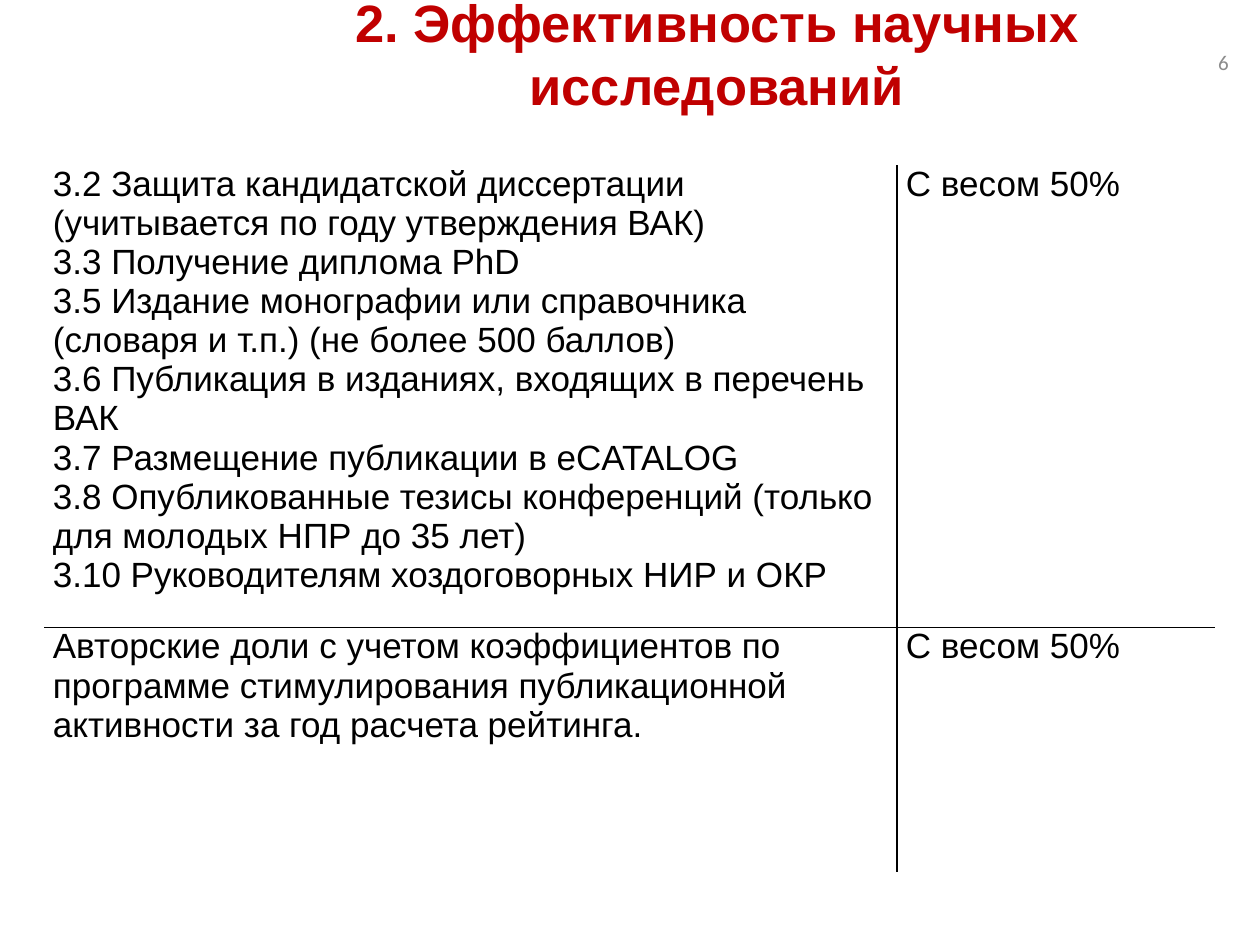
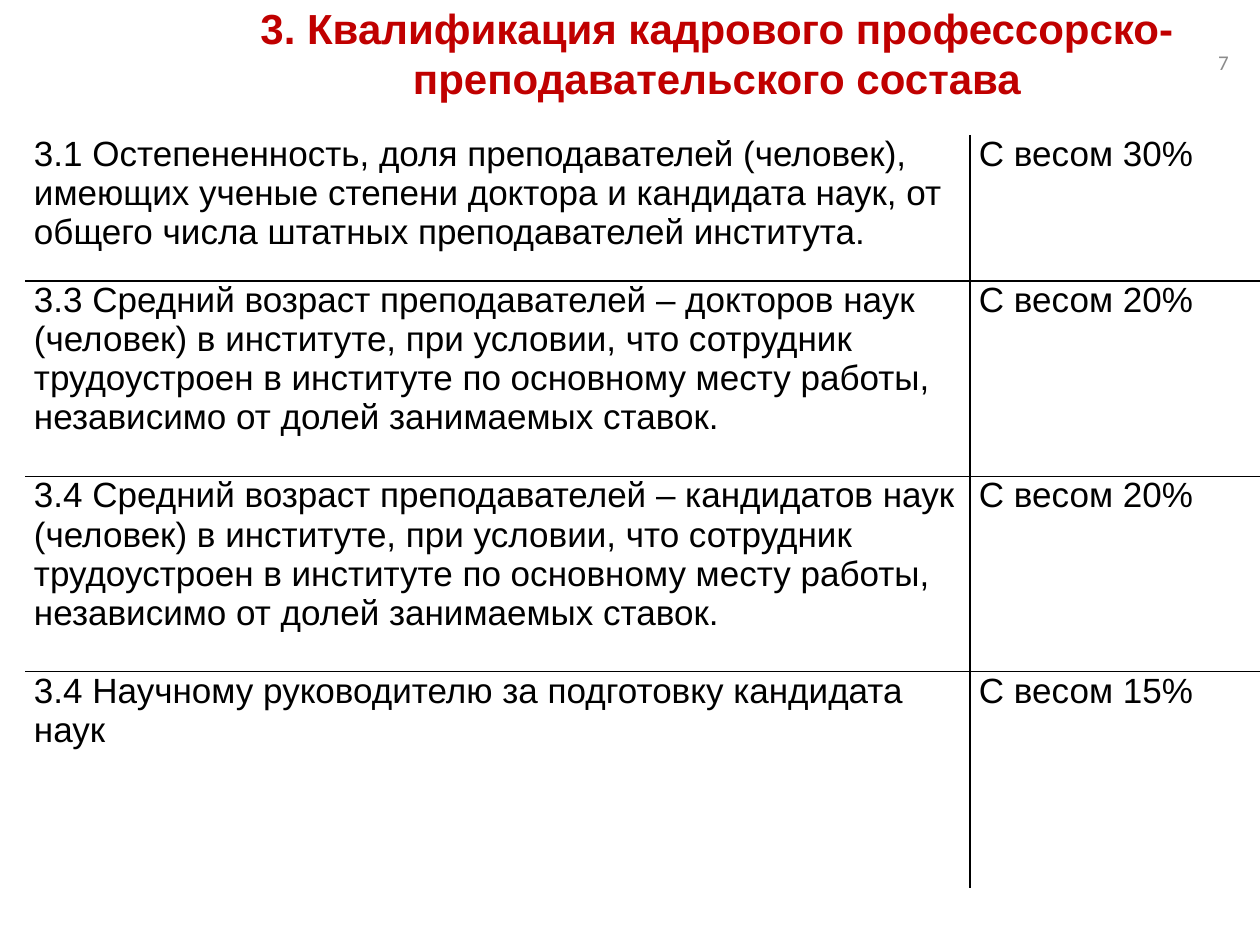
from dataclasses import dataclass

from lxml import etree
from pptx import Presentation
from pptx.dml.color import RGBColor
from pptx.enum.text import MSO_ANCHOR, PP_ALIGN
from pptx.oxml.ns import qn
from pptx.util import Inches, Pt

CENTER, LEFT, RIGHT = PP_ALIGN.CENTER, PP_ALIGN.LEFT, PP_ALIGN.RIGHT
TOP, MIDDLE = MSO_ANCHOR.TOP, MSO_ANCHOR.MIDDLE

TITLE_RED = "C00000"
NUMBER_GRAY = "8C8C8C"
BLACK = "000000"
TITLE_AREA = (1.38, 0, 8.62, 0.84)
NUMBER_AREA = (9.17, 0.29, 0.68, 0.4)
CELL_MARGIN = 0.07


@dataclass
class Criterion:
    lines: list[str]
    weight: str
    height: float


@dataclass
class RatingPage:
    number: int
    title: str
    title_size: int
    left: float
    top: float
    widths: tuple[float, float]
    criteria: list[Criterion]


AGE_TEXT = ("3.{} Средний возраст преподавателей – {} наук (человек) в институте, "
            "при условии, что сотрудник трудоустроен в институте по основному месту "
            "работы, независимо от долей занимаемых ставок.")

PAGES = [
    RatingPage(6, "2. Эффективность научных исследований", 30, 0.35, 1.31, (6.77, 2.52), [
        Criterion([
            "3.2 Защита кандидатской диссертации (учитывается по году утверждения ВАК)",
            "3.3 Получение диплома PhD",
            "3.5 Издание монографии или справочника (словаря и т.п.) (не более 500 баллов)",
            "3.6 Публикация в изданиях, входящих в перечень ВАК",
            "3.7 Размещение публикации в eCATALOG",
            "3.8 Опубликованные тезисы конференций (только для молодых НПР до 35 лет)",
            "3.10 Руководителям хоздоговорных НИР и ОКР",
        ], "С весом 50%", 3.1),
        Criterion(["Авторские доли с учетом коэффициентов по программе стимулирования "
                   "публикационной активности за год расчета рейтинга."],
                  "С весом 50%", 1.94),
    ]),
    RatingPage(7, "3. Квалификация кадрового профессорско-преподавательского состава",
               24, 0.2, 1.07, (7.5, 2.31), [
        Criterion(["3.1 Остепененность, доля преподавателей (человек), имеющих ученые "
                   "степени доктора и кандидата наук, от общего числа штатных "
                   "преподавателей института."], "С весом 30%", 1.16),
        Criterion([AGE_TEXT.format(3, "докторов")], "С весом 20%", 1.55),
        Criterion([AGE_TEXT.format(4, "кандидатов")], "С весом 20%", 1.55),
        Criterion(["3.4 Научному руководителю за подготовку кандидата наук"],
                  "С весом 15%", 1.72),
    ]),
]


def color(value: str) -> RGBColor:
    return RGBColor.from_string(value)


def write(frame, lines: list[str], *, size: int, ink: str = BLACK, font: str = "Arial",
          bold: bool = False, align=LEFT) -> None:
    """Fill a text frame with one paragraph per line."""
    frame.word_wrap = True
    for index, line in enumerate(lines):
        para = frame.paragraphs[0] if index == 0 else frame.add_paragraph()
        para.alignment = align
        span = para.add_run()
        span.text = line
        span.font.name = font
        span.font.size = Pt(size)
        span.font.bold = bold
        span.font.color.rgb = color(ink)


def add_label(page, area: tuple, text: str, **style) -> None:
    box = page.shapes.add_textbox(*map(Inches, area))
    box.text_frame.vertical_anchor = MIDDLE
    write(box.text_frame, [text], **style)


def set_borders(cell, drawn: dict[str, bool]) -> None:
    """Draw a black 1 pt line on the chosen sides and none on the others."""
    properties = cell._tc.get_or_add_tcPr()
    for side, visible in drawn.items():
        line = etree.SubElement(properties, qn(f"a:ln{side}"), w=str(Pt(1)))
        if visible:
            fill = etree.SubElement(line, qn("a:solidFill"))
            etree.SubElement(fill, qn("a:srgbClr"), val=BLACK)
        else:
            etree.SubElement(line, qn("a:noFill"))


def add_criteria_table(page, rating: RatingPage) -> None:
    criteria = rating.criteria
    frame = page.shapes.add_table(
        len(criteria), 2, Inches(rating.left), Inches(rating.top),
        Inches(sum(rating.widths)), Inches(sum(item.height for item in criteria)))
    table = frame.table
    table.first_row = table.horz_banding = False
    for column, width in zip(table.columns, rating.widths):
        column.width = Inches(width)
    for row, item in enumerate(criteria):
        table.rows[row].height = Inches(item.height)
        for column, lines in enumerate((item.lines, [item.weight])):
            cell = table.cell(row, column)
            cell.margin_left = cell.margin_right = Inches(CELL_MARGIN)
            cell.margin_top = cell.margin_bottom = 0
            cell.vertical_anchor = TOP
            write(cell.text_frame, lines, size=20)
            # Only the inner grid lines are visible
            set_borders(cell, {"L": column == 1, "R": column == 0,
                               "T": row > 0, "B": row < len(criteria) - 1})
            cell.fill.background()


def main() -> None:
    deck = Presentation()
    deck.slide_width, deck.slide_height = Inches(10), Inches(7.5)
    for rating in PAGES:
        page = deck.slides.add_slide(deck.slide_layouts[6])
        add_label(page, TITLE_AREA, rating.title, size=rating.title_size,
                  ink=TITLE_RED, bold=True, align=CENTER)
        add_label(page, NUMBER_AREA, str(rating.number), size=12,
                  ink=NUMBER_GRAY, font="Calibri", align=RIGHT)
        add_criteria_table(page, rating)
    deck.save("out.pptx")


if __name__ == "__main__":
    main()
